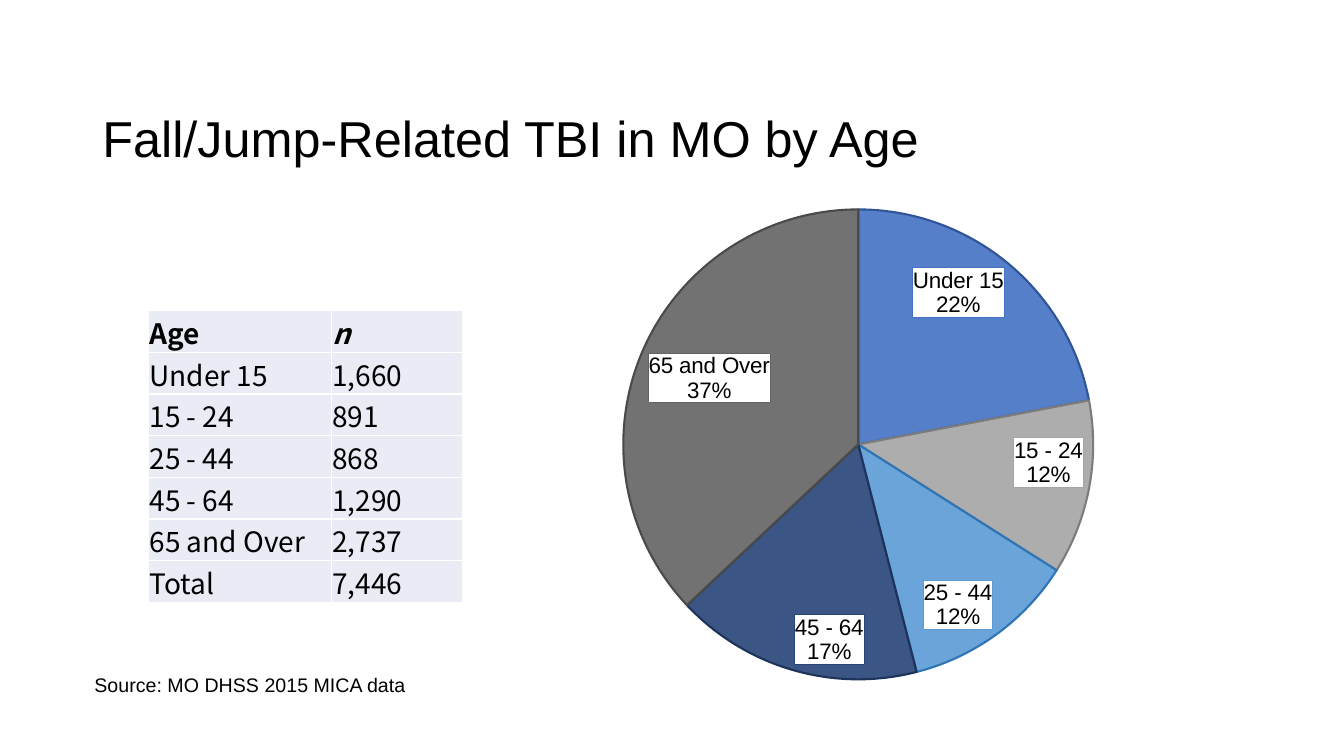
"""Build the slide on fall and jump related TBI in Missouri by age."""
from dataclasses import dataclass

from pptx import Presentation
from pptx.chart.data import CategoryChartData
from pptx.chart.series import PieSeries
from pptx.dml.color import RGBColor
from pptx.enum.chart import XL_CHART_TYPE, XL_LABEL_POSITION
from pptx.enum.text import MSO_ANCHOR
from pptx.oxml import parse_xml
from pptx.oxml.ns import nsdecls, qn
from pptx.slide import Slide
from pptx.table import _Cell
from pptx.text.text import Font, _Paragraph
from pptx.util import Cm, Pt

PIE = XL_CHART_TYPE.PIE
INSIDE_END = XL_LABEL_POSITION.INSIDE_END
MIDDLE = MSO_ANCHOR.MIDDLE
BOTTOM = MSO_ANCHOR.BOTTOM
TOP = MSO_ANCHOR.TOP

BLACK = RGBColor(0x00, 0x00, 0x00)
WHITE = RGBColor(0xFF, 0xFF, 0xFF)
CELL_FILL = RGBColor(0xE9, 0xEB, 0xF5)
BLUE = RGBColor(0x44, 0x72, 0xC4)
DARK_BLUE = RGBColor(0x2F, 0x55, 0x97)
GRAY = RGBColor(0xA5, 0xA5, 0xA5)
DARK_GRAY = RGBColor(0x7C, 0x7C, 0x7C)
SKY = RGBColor(0x5B, 0x9B, 0xD5)
DARK_SKY = RGBColor(0x2E, 0x75, 0xB6)
NAVY = RGBColor(0x26, 0x44, 0x78)
DARK_NAVY = RGBColor(0x1D, 0x33, 0x5A)
CHARCOAL = RGBColor(0x63, 0x63, 0x63)
DARK_CHARCOAL = RGBColor(0x4A, 0x4A, 0x4A)

SANS = "Arial"
TABLE_FONT = "Noto Sans CJK KR"


@dataclass(frozen=True)
class AgeGroup:
    name: str
    count: str
    percent: int
    fill: RGBColor
    outline: RGBColor


@dataclass(frozen=True)
class TextBlock:
    text: str
    left: float
    top: float
    width: float
    height: float
    size: int
    anchor: MSO_ANCHOR
    line_spacing: float


AGE_GROUPS = [
    AgeGroup("Under 15", "1,660", 22, BLUE, DARK_BLUE),
    AgeGroup("15 - 24", "891", 12, GRAY, DARK_GRAY),
    AgeGroup("25 - 44", "868", 12, SKY, DARK_SKY),
    AgeGroup("45 - 64", "1,290", 17, NAVY, DARK_NAVY),
    AgeGroup("65 and Over", "2,737", 37, CHARCOAL, DARK_CHARCOAL),
]

TITLE = TextBlock("Fall/Jump-Related TBI in MO by Age", 2.33, 2.21, 29.21, 2.69, 36, MIDDLE, 0.9)
SOURCE = TextBlock("Source: MO DHSS 2015 MICA data", 2.13, 16.84, 16.94, 0.86, 14, TOP, 1.0)


def style_font(font: Font, size: int, name: str) -> None:
    font.size = Pt(size)
    font.name = name
    font.color.rgb = BLACK


def add_run(paragraph: _Paragraph, text: str, size: int, name: str) -> Font:
    run = paragraph.add_run()
    run.text = text
    style_font(run.font, size, name)
    return run.font


def add_text(slide: Slide, block: TextBlock) -> None:
    shape = slide.shapes.add_textbox(
        Cm(block.left), Cm(block.top), Cm(block.width), Cm(block.height)
    )
    frame = shape.text_frame
    frame.word_wrap = True
    frame.vertical_anchor = block.anchor
    paragraph = frame.paragraphs[0]
    paragraph.line_spacing = block.line_spacing
    add_run(paragraph, block.text, block.size, SANS)


def add_slice_label(series: PieSeries, index: int, border: RGBColor) -> None:
    label = parse_xml(
        f'<c:dLbl {nsdecls("c", "a")}><c:idx val="{index}"/>'
        '<c:numFmt formatCode="0%" sourceLinked="0"/>'
        f'<c:spPr><a:solidFill><a:srgbClr val="{WHITE}"/></a:solidFill>'
        f'<a:ln w="9525"><a:solidFill><a:srgbClr val="{border}"/></a:solidFill></a:ln></c:spPr>'
        '<c:txPr><a:bodyPr/><a:p><a:pPr><a:defRPr sz="1600" b="0">'
        f'<a:solidFill><a:srgbClr val="{BLACK}"/></a:solidFill><a:latin typeface="{SANS}"/>'
        '</a:defRPr></a:pPr><a:endParaRPr lang="en-US"/></a:p></c:txPr>'
        '<c:dLblPos val="inEnd"/><c:showLegendKey val="0"/><c:showVal val="0"/>'
        '<c:showCatName val="1"/><c:showSerName val="0"/><c:showPercent val="1"/>'
        '<c:showBubbleSize val="0"/><c:separator>\n</c:separator></c:dLbl>'
    )
    series._element.find(qn("c:dLbls")).insert(index, label)


def add_pie(slide: Slide) -> None:
    data = CategoryChartData()
    data.categories = [group.name for group in AGE_GROUPS]
    data.add_series("Series 1", [group.percent for group in AGE_GROUPS])
    chart = slide.shapes.add_chart(PIE, Cm(11.05), Cm(4.9), Cm(21.16), Cm(12.6), data).chart
    chart.has_title = False
    chart.has_legend = False
    style_font(chart.font, 10, SANS)
    plot = chart.plots[0]
    plot.vary_by_categories = True
    series = plot.series[0]

    for index, group in enumerate(AGE_GROUPS):
        fill = series.points[index].format.fill
        fill.solid()
        fill.fore_color.rgb = group.fill
    for color in series._element.iter(qn("a:srgbClr")):
        color.append(parse_xml(f'<a:alpha {nsdecls("a")} val="90000"/>'))

    labels = series.data_labels
    labels.show_value = False
    labels.show_category_name = True
    labels.show_percentage = True
    labels.number_format = "0%"
    labels.number_format_is_linked = False
    labels.position = INSIDE_END
    style_font(labels.font, 16, SANS)
    for index, group in enumerate(AGE_GROUPS):
        line = series.points[index].format.line
        line.color.rgb = group.outline
        line.width = Pt(1.5)
        add_slice_label(series, index, group.fill)

    plot_area = chart._chartSpace.chart.plotArea
    for layout in plot_area.findall(qn("c:layout")):
        plot_area.remove(layout)
    plot_area.insert(0, parse_xml(
        f'<c:layout {nsdecls("c")}><c:manualLayout><c:layoutTarget val="inner"/>'
        '<c:xMode val="edge"/><c:yMode val="edge"/><c:x val="0.22"/><c:y val="0.03"/>'
        '<c:w val="0.56"/><c:h val="0.94"/></c:manualLayout></c:layout>'
    ))


def style_cell(cell: _Cell) -> None:
    cell.margin_left = cell.margin_right = cell.margin_top = Cm(0.02)
    cell.margin_bottom = Cm(0)
    cell.vertical_anchor = BOTTOM
    cell.fill.solid()
    cell.fill.fore_color.rgb = CELL_FILL
    properties = cell._tc.get_or_add_tcPr()
    for position, side in enumerate(("lnL", "lnR", "lnT", "lnB")):
        properties.insert(position, parse_xml(
            f'<a:{side} {nsdecls("a")} w="12700"><a:solidFill>'
            f'<a:srgbClr val="{WHITE}"/></a:solidFill></a:{side}>'
        ))


def add_age_table(slide: Slide) -> None:
    rows = [("Age", "n"), *((group.name, group.count) for group in AGE_GROUPS), ("Total", "7,446")]
    row_height = Cm(1.05)
    table = slide.shapes.add_table(
        len(rows), 2, Cm(3.75), Cm(7.83), Cm(7.9), row_height * len(rows)
    ).table
    table.first_row = False
    table.horz_banding = False
    for column, width in zip(table.columns, (4.6, 3.3)):
        column.width = Cm(width)
    for row_index, values in enumerate(rows):
        table.rows[row_index].height = row_height
        for column_index, text in enumerate(values):
            cell = table.cell(row_index, column_index)
            style_cell(cell)
            font = add_run(cell.text_frame.paragraphs[0], text, 20, TABLE_FONT)
            font.bold = row_index == 0
            font.italic = row_index == 0 and column_index == 1


def main() -> None:
    presentation = Presentation()
    presentation.slide_width = Cm(33.87)
    presentation.slide_height = Cm(19.05)
    slide = presentation.slides.add_slide(presentation.slide_layouts[6])
    add_text(slide, TITLE)
    add_pie(slide)
    add_age_table(slide)
    add_text(slide, SOURCE)
    presentation.save("out.pptx")


if __name__ == "__main__":
    main()
